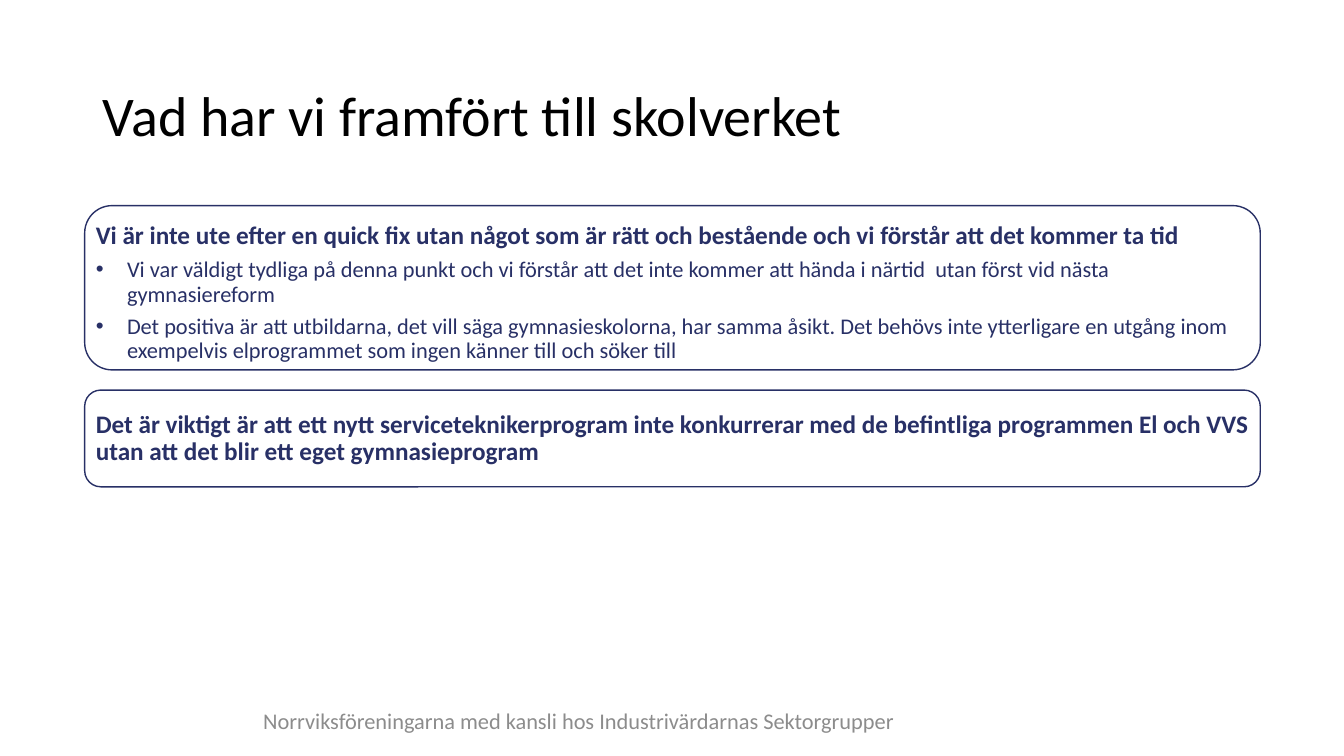
from dataclasses import dataclass

from lxml.etree import SubElement
from pptx import Presentation
from pptx.dml.color import RGBColor
from pptx.enum.shapes import MSO_SHAPE
from pptx.enum.text import MSO_ANCHOR, PP_ALIGN
from pptx.oxml.ns import qn
from pptx.util import Inches, Pt


@dataclass(frozen=True)
class Theme:
    font: str = "Calibri"
    black: RGBColor = RGBColor(0x00, 0x00, 0x00)
    navy: RGBColor = RGBColor(0x28, 0x30, 0x66)
    grey: RGBColor = RGBColor(0x8C, 0x8C, 0x8C)
    white: RGBColor = RGBColor(0xFF, 0xFF, 0xFF)
    title_size: int = 40
    heading_size: int = 18
    body_size: int = 16


THEME = Theme()

CARD_LEFT, CARD_WIDTH = 0.84, 11.66
CARD_MARGIN = 0.04
CARD_INSET = 0.07
LINE_SPACING = 0.9
SPACE_AFTER = 0.35  # share of the type size
BULLET_INDENT = 0.31

# Top, height, gap above the text, heading, points
CARDS = [
    (2.04, 1.63, 0.14,
     "Vi är inte ute efter en quick fix utan något som är rätt och bestående "
     "och vi förstår att det kommer ta tid",
     ["Vi var väldigt tydliga på denna punkt och vi förstår att det inte kommer "
      "att hända i närtid  utan först vid nästa gymnasiereform",
      "Det positiva är att utbildarna, det vill säga gymnasieskolorna, har samma "
      "åsikt. Det behövs inte ytterligare en utgång inom exempelvis "
      "elprogrammet som ingen känner till och söker till"]),
    (3.87, 0.96, 0.05,
     "Det är viktigt är att ett nytt serviceteknikerprogram inte konkurrerar med "
     "de befintliga programmen El och VVS utan att det blir ett eget "
     "gymnasieprogram",
     []),
]


def add_text_frame(slide, left, top, width, height):
    box = slide.shapes.add_textbox(
        Inches(left), Inches(top), Inches(width), Inches(height))
    frame = box.text_frame
    frame.word_wrap = True
    frame.vertical_anchor = MSO_ANCHOR.MIDDLE
    return frame


def add_run(paragraph, text, size, color, bold=False):
    run = paragraph.add_run()
    run.text = text
    run.font.name = THEME.font
    run.font.size = Pt(size)
    run.font.bold = bold
    run.font.color.rgb = color


def add_bullet(paragraph):
    properties = paragraph._p.get_or_add_pPr()
    properties.set("marL", str(Inches(BULLET_INDENT)))
    properties.set("indent", str(-Inches(BULLET_INDENT)))
    SubElement(properties, qn("a:buFont"), typeface="Arial")
    SubElement(properties, qn("a:buChar"), char="•")


def fill_card_paragraph(paragraph, text, size, bold=False):
    paragraph.line_spacing = LINE_SPACING
    paragraph.space_after = Pt(size * SPACE_AFTER)
    add_run(paragraph, text, size, THEME.navy, bold)


def add_card(slide, top, height, text_gap, heading, points):
    # Rounded frame
    card = slide.shapes.add_shape(
        MSO_SHAPE.ROUNDED_RECTANGLE,
        Inches(CARD_LEFT), Inches(top), Inches(CARD_WIDTH), Inches(height))
    card.shadow.inherit = False
    card.fill.solid()
    card.fill.fore_color.rgb = THEME.white
    card.line.color.rgb = THEME.navy
    card.line.width = Pt(1)

    # Heading and bullet points
    frame = add_text_frame(
        slide, CARD_LEFT + CARD_MARGIN, top + text_gap,
        CARD_WIDTH - 2 * CARD_MARGIN, height - text_gap - CARD_MARGIN)
    frame.margin_left = frame.margin_right = Inches(CARD_INSET)
    frame.margin_top = frame.margin_bottom = Inches(CARD_INSET)
    fill_card_paragraph(
        frame.paragraphs[0], heading, THEME.heading_size, bold=True)
    for point in points:
        paragraph = frame.add_paragraph()
        add_bullet(paragraph)
        fill_card_paragraph(paragraph, point, THEME.body_size)


def add_title(slide, text):
    title = add_text_frame(slide, 0.92, 0.45, 11.93, 1.45).paragraphs[0]
    title.line_spacing = LINE_SPACING
    add_run(title, text, THEME.title_size, THEME.black)


def add_footer(slide, text):
    footer = add_text_frame(slide, 2.32, 6.95, 6.84, 0.4).paragraphs[0]
    footer.alignment = PP_ALIGN.CENTER
    add_run(footer, text, THEME.body_size, THEME.grey)


def main():
    presentation = Presentation()
    presentation.slide_width = Inches(13.33)
    presentation.slide_height = Inches(7.5)
    slide = presentation.slides.add_slide(presentation.slide_layouts[6])

    add_title(slide, "Vad har vi framfört till skolverket")
    add_footer(slide, "Norrviksföreningarna med kansli hos "
                      "Industrivärdarnas Sektorgrupper")
    for card in CARDS:
        add_card(slide, *card)

    presentation.save("out.pptx")


if __name__ == "__main__":
    main()
